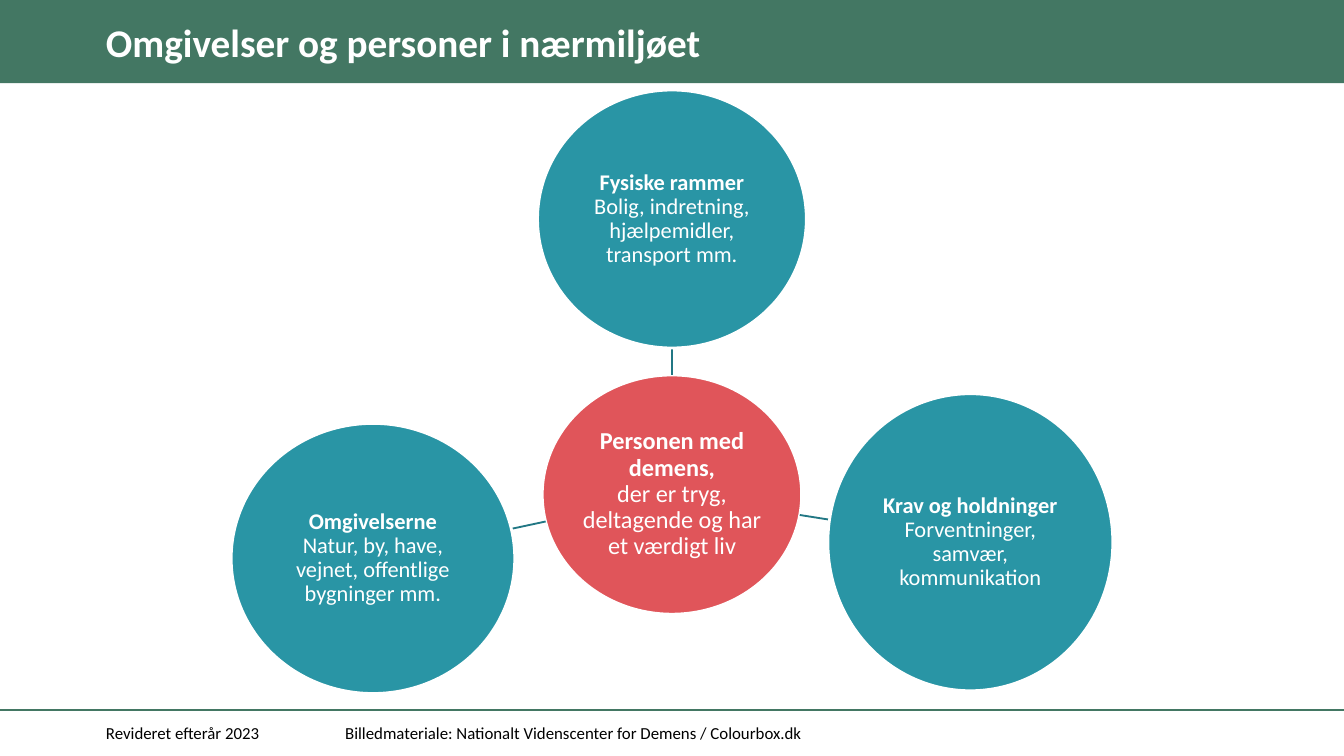
import math

import pptx
import pptx.dml.color
import pptx.enum.shapes
import pptx.enum.text
import pptx.oxml
import pptx.oxml.ns
import pptx.util

GREEN, TEAL, RED, SPOKE = "437763", "2995A5", "E0555A", "217784"
WHITE, BLACK = "FFFFFF", "000000"
FONT = "Calibri"

# Content: places are percent of the slide's width and height
TITLE = ("Omgivelser og personer i nærmiljøet", (6.9, 1.96, 74.4, 7.82))
FOOTERS = [
    ("Revideret efterår 2023", (6.9, 94.22, 16.8, 5.33)),
    ("Billedmateriale: Nationalt Videnscenter for Demens / Colourbox.dk",
     (24.7, 94.22, 63, 5.33)),
]
HEADER_HEIGHT, FOOTER_RULE = 11, 93.87

# Circles: heading, body, (centre x, centre y, width, height)
PERSON = ("Personen med demens,", "der er tryg, deltagende og har et værdigt liv",
          (50, 65.42, 19.3, 31.64))
SURROUNDINGS = [
    ("Fysiske rammer", "Bolig, indretning, hjælpemidler, transport mm.",
     (50, 28.98, 20, 34.13)),
    ("Krav og holdninger", "Forventninger, samvær, kommunikation",
     (72.2, 71.73, 21.2, 39.29)),
    ("Omgivelserne", "Natur, by, have, vejnet, offentlige bygninger mm.",
     (27.75, 73.87, 21.1, 35.73)),
]

deck = pptx.Presentation()
deck.slide_width = pptx.util.Inches(10)
deck.slide_height = pptx.util.Inches(5.625)
page = deck.slides.add_slide(deck.slide_layouts[6])


def across(share):
    return round(deck.slide_width * share / 100)


def down(share):
    return round(deck.slide_height * share / 100)


def place(left, top, width, height):
    return across(left), down(top), across(width), down(height)


def colour(value):
    return pptx.dml.color.RGBColor.from_string(value)


def write(box, parts, size, ink, align="LEFT", spacing=1.0, insets=(0.1, 0.05, 0.1, 0.05)):
    """Fill one paragraph; each (text, bold) part starts on its own line."""
    frame = box.text_frame
    frame.word_wrap = True
    frame.vertical_anchor = pptx.enum.text.MSO_ANCHOR.MIDDLE
    (frame.margin_left, frame.margin_top,
     frame.margin_right, frame.margin_bottom) = map(pptx.util.Inches, insets)
    para = frame.paragraphs[0]
    para.alignment = pptx.enum.text.PP_ALIGN[align]
    para.line_spacing = spacing
    for index, (text, bold) in enumerate(parts):
        if index:
            para.add_line_break()
        span = para.add_run()
        span.text = text
        span.font.name = FONT
        span.font.size = pptx.util.Pt(size)
        span.font.bold = bold
        span.font.color.rgb = colour(ink)


def add_line(start, end, ink):
    line = page.shapes.add_connector(
        pptx.enum.shapes.MSO_CONNECTOR.STRAIGHT,
        across(start[0]), down(start[1]), across(end[0]), down(end[1]))
    line.line.color.rgb = colour(ink)
    line.line.width = pptx.util.Pt(1)
    properties = line._element.spPr
    properties.append(pptx.oxml.parse_xml(
        "<a:effectLst %s/>" % pptx.oxml.ns.nsdecls("a")))


def add_shape(kind, area, fill):
    shape = page.shapes.add_shape(pptx.enum.shapes.MSO_SHAPE[kind], *place(*area))
    shape.shadow.inherit = False
    shape.fill.solid()
    shape.fill.fore_color.rgb = colour(fill)
    shape.line.fill.background()
    return shape


def add_circle(heading, body, area, fill, size):
    x, y, width, height = area
    circle = add_shape("OVAL", (x - width / 2, y - height / 2, width, height), fill)
    circle.line.color.rgb = colour(WHITE)
    circle.line.width = pptx.util.Pt(1.5)
    write(circle, [(heading, True), (body, False)], size, WHITE,
          align="CENTER", spacing=0.9, insets=(0.01,) * 4)


def edge_towards(area, target):
    """Point where the line from a circle's centre to another leaves its edge."""
    x, y, width, height = area
    dx, dy = target[0] - x, target[1] - y
    share = 1 / math.hypot(dx / (width / 2), dy / (height / 2))
    return x + dx * share, y + dy * share


# Header band, footer rule and their text
add_shape("RECTANGLE", (0, 0, 100, HEADER_HEIGHT), GREEN)
add_line((0, FOOTER_RULE), (100, FOOTER_RULE), GREEN)
title_text, title_area = TITLE
write(page.shapes.add_textbox(*place(*title_area)), [(title_text, True)], 21, WHITE,
      spacing=0.9, insets=(0.1, 0, 0, 0))
for text, area in FOOTERS:
    write(page.shapes.add_textbox(*place(*area)), [(text, False)], 9, BLACK)

# Person in the middle, with a spoke to each surrounding circle
hub = PERSON[2]
add_circle(*PERSON, fill=RED, size=13)
for heading, body, area in SURROUNDINGS:
    add_line(edge_towards(hub, area), edge_towards(area, hub), SPOKE)
    add_circle(heading, body, area, fill=TEAL, size=12)

deck.save("out.pptx")
